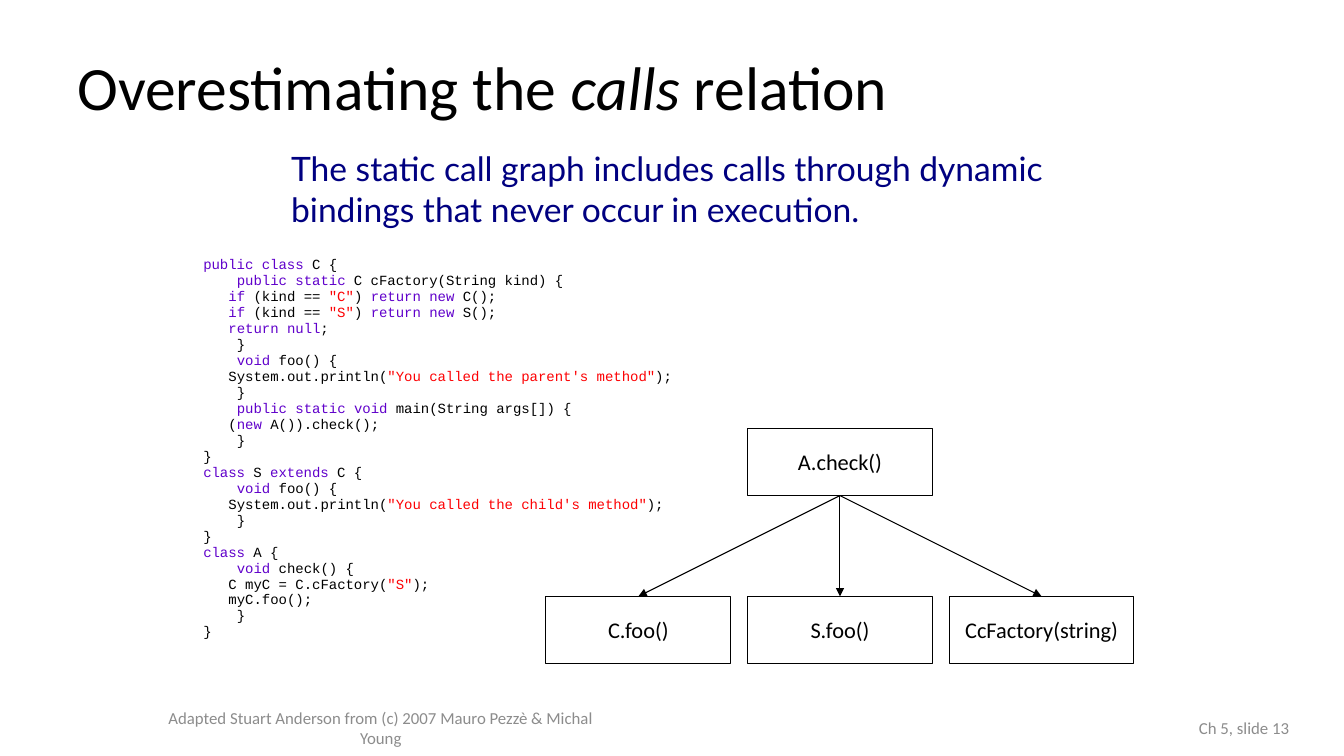
from pptx import Presentation
from pptx.dml.color import RGBColor
from pptx.enum.shapes import MSO_CONNECTOR as Connector, MSO_SHAPE as Shape
from pptx.enum.text import MSO_ANCHOR as Anchor, MSO_AUTO_SIZE as AutoSize, PP_ALIGN as Align
from pptx.oxml.ns import qn
from pptx.util import Pt
from lxml.etree import SubElement

BLACK = RGBColor(0x00, 0x00, 0x00)
NAVY = RGBColor(0x00, 0x00, 0x80)
GREY = RGBColor(0x8C, 0x8C, 0x8C)
KEYWORD = RGBColor(0x60, 0x00, 0xCB)
STRING = RGBColor(0xFD, 0x00, 0x03)

MEMBER, BODY = 24, 18  # left indents of the code lines

# Coloured parts stand between bars.
CODE = [
    (0, '|public class| C {'),
    (MEMBER, '|public static| C cFactory(String kind) {'),
    (BODY, '|if| (kind == |"C"|) |return new| C();'),
    (BODY, '|if| (kind == |"S"|) |return new| S();'),
    (BODY, '|return null|;'),
    (MEMBER, '}'),
    (MEMBER, '|void| foo() {'),
    (BODY, 'System.out.println(|"You called the parent\'s method"|);'),
    (MEMBER, '}'),
    (MEMBER, '|public static void| main(String args[]) {'),
    (BODY, '(|new| A()).check();'),
    (MEMBER, '}'),
    (0, '}'),
    (0, '|class| S |extends| C {'),
    (MEMBER, '|void| foo() {'),
    (BODY, 'System.out.println(|"You called the child\'s method"|);'),
    (MEMBER, '}'),
    (0, '}'),
    (0, '|class| A {'),
    (MEMBER, '|void| check() {'),
    (BODY, 'C myC = C.cFactory(|"S"|);'),
    (BODY, 'myC.foo();'),
    (MEMBER, '}'),
    (0, '}'),
]

BOX_WIDTH, BOX_HEIGHT, BOX_STEP = 132, 48, 144
CALLEES_LEFT, CALLER_TOP, CALLEES_TOP = 390, 306, 426
CALLEES = ["C.foo()", "S.foo()", "CcFactory(string)"]


def place(shape, left, top, width, height):
    shape.left, shape.top = Pt(left), Pt(top)
    shape.width, shape.height = Pt(width), Pt(height)


def set_font(font, name, size, color):
    font.name, font.size = name, Pt(size)
    font.color.rgb = color


def add_title(page):
    title = page.shapes.title
    place(title, 48, 21.6, 864, 86.4)
    title.text_frame.vertical_anchor = Anchor.MIDDLE
    para = title.text_frame.paragraphs[0]
    para.alignment, para.line_spacing = Align.LEFT, 0.9
    set_font(para.font, "Calibri", 44, BLACK)
    for text, italic in (("Overestimating the ", False), ("calls", True), (" relation", False)):
        span = para.add_run()
        span.text = text
        span.font.italic = italic


def add_code_line(para, indent, line):
    para.line_spacing, para.space_before = 0.9, Pt(0.6)
    set_font(para.font, "Courier New", 10, BLACK)
    properties = para._p.get_or_add_pPr()
    properties.set("marL", str(Pt(indent)))
    properties.set("indent", "0")
    properties.insert_element_before(
        properties.makeelement(qn("a:buNone"), {}), "a:tabLst", "a:defRPr", "a:extLst")
    for index, text in enumerate(line.split("|")):
        if text:
            span = para.add_run()
            span.text = text
            color = BLACK
            if index % 2:
                color = STRING if text.startswith('"') else KEYWORD
            set_font(span.font, "Courier New", 10, color)


def add_code(page):
    body = page.placeholders[1]
    place(body, 138, 180, 384, 312)
    frame = body.text_frame
    frame.auto_size = AutoSize.NONE
    for index, (indent, line) in enumerate(CODE):
        para = frame.add_paragraph() if index else frame.paragraphs[0]
        add_code_line(para, indent, line)


def add_text(page, text, bounds, font, align, anchor):
    box = page.shapes.add_textbox(0, 0, 0, 0)
    place(box, *bounds)
    frame = box.text_frame
    frame.word_wrap, frame.vertical_anchor = True, anchor
    para = frame.paragraphs[0]
    para.text, para.alignment = text, align
    set_font(para.font, *font)
    return box


def add_method(page, name, left, top):
    box = page.shapes.add_shape(Shape.RECTANGLE, Pt(left), Pt(top), Pt(BOX_WIDTH), Pt(BOX_HEIGHT))
    box.shadow.inherit = False
    box.fill.background()
    box.line.color.rgb, box.line.width = BLACK, Pt(0.75)
    frame = box.text_frame
    frame.word_wrap, frame.vertical_anchor = False, Anchor.MIDDLE
    para = frame.paragraphs[0]
    para.text, para.alignment = name, Align.CENTER
    set_font(para.font, "Calibri", 16, BLACK)
    return box


def add_call(page, caller, callee):
    """Draw an arrow from the bottom of the caller to the top of the callee."""
    arrow = page.shapes.add_connector(Connector.STRAIGHT, 0, 0, 0, 0)
    arrow.begin_connect(caller, 2)
    arrow.end_connect(callee, 0)
    arrow.line.color.rgb, arrow.line.width = BLACK, Pt(0.75)
    SubElement(arrow.line._get_or_add_ln(), qn("a:tailEnd"), type="triangle")
    SubElement(arrow._element.spPr, qn("a:effectLst"))


def add_call_graph(page):
    caller = add_method(page, "A.check()", CALLEES_LEFT + BOX_STEP, CALLER_TOP)
    callees = [add_method(page, name, CALLEES_LEFT + index * BOX_STEP, CALLEES_TOP)
               for index, name in enumerate(CALLEES)]
    for callee in callees:
        add_call(page, caller, callee)


def main():
    deck = Presentation()
    deck.slide_width, deck.slide_height = Pt(960), Pt(540)
    page = deck.slides.add_slide(deck.slide_layouts[1])
    add_title(page)
    add_code(page)
    small = ("Calibri", 12, GREY)
    add_text(page, "Adapted Stuart Anderson from (c) 2007 Mauro Pezzè & Michal Young",
             (104, 510, 336, 19.2), small, Align.CENTER, Anchor.MIDDLE)
    add_text(page, "Ch 5, slide 13", (704, 510, 224, 19.2), small, Align.RIGHT, Anchor.MIDDLE)
    message = add_text(page, "The static call graph includes calls through dynamic "
                       "bindings that never occur in execution.",
                       (156, 101.5, 642, 65.5), ("Lato", 24, NAVY), Align.LEFT, Anchor.BOTTOM)
    message.text_frame.margin_left = Pt(52)
    add_call_graph(page)
    deck.save("out.pptx")


if __name__ == "__main__":
    main()
